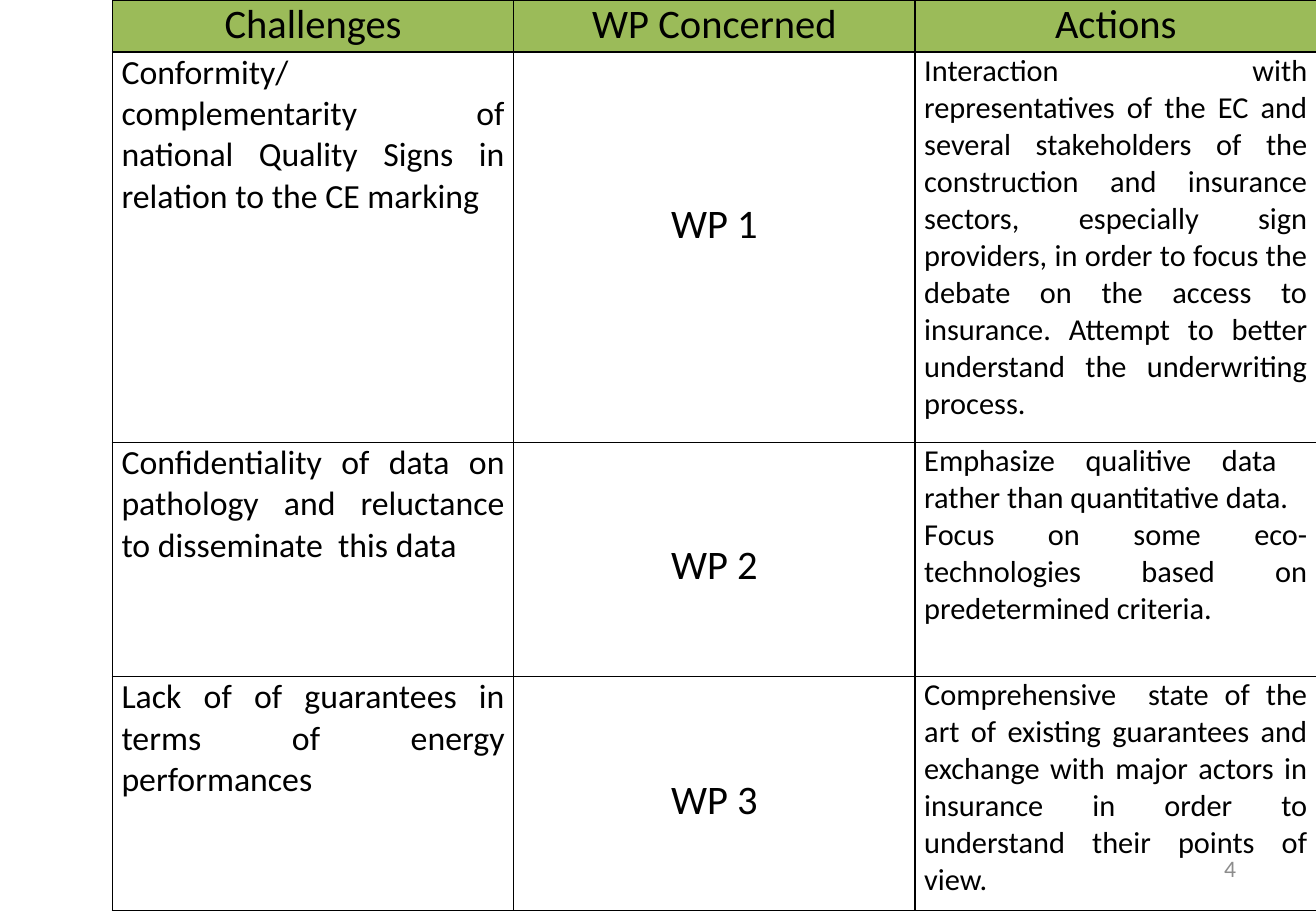
import pptx
import pptx.dml.color
import pptx.enum.text
import pptx.oxml
import pptx.oxml.ns
import pptx.util
from dataclasses import dataclass

Cm = pptx.util.Cm
Align = pptx.enum.text.PP_ALIGN


@dataclass(frozen=True)
class Theme:
    font: str = "Calibri"
    text: str = "000000"
    border: str = "000000"
    header_fill: str = "9BBB59"
    page_number: str = "8C8C8C"
    heading_size: int = 24
    challenge_size: int = 20
    action_size: int = 18
    page_number_size: int = 14


theme = Theme()


def write(frame, lines, size, color, alignment):
    frame.word_wrap = True
    for index, line in enumerate(lines):
        paragraph = frame.paragraphs[0] if index == 0 else frame.add_paragraph()
        paragraph.alignment = alignment
        run = paragraph.add_run()
        run.text = line
        run.font.name = theme.font
        run.font.size = pptx.util.Pt(size)
        run.font.color.rgb = pptx.dml.color.RGBColor.from_string(color)


def add_borders(cell):
    properties = cell._tc.get_or_add_tcPr()
    for side in ("lnL", "lnR", "lnT", "lnB"):
        properties.append(pptx.oxml.parse_xml(
            f'<a:{side} {pptx.oxml.ns.nsdecls("a")} w="12700"><a:solidFill>'
            f'<a:srgbClr val="{theme.border}"/></a:solidFill></a:{side}>'))


presentation = pptx.Presentation()
presentation.slide_width = Cm(27.51)
presentation.slide_height = Cm(19.05)
slide = presentation.slides.add_slide(presentation.slide_layouts[6])

headings = ["Challenges", "WP Concerned", "Actions"]
work_packages = [
    (["Conformity/complementarity of national Quality Signs in relation to the CE marking"],
     ["WP 1"],
     ["Interaction with representatives of the EC and several stakeholders of the "
      "construction and insurance sectors, especially sign providers, in order to focus "
      "the debate on the access to insurance. Attempt to better understand the "
      "underwriting process."]),
    (["Confidentiality of data on pathology and reluctance to disseminate  this data"],
     ["WP 2"],
     ["Emphasize qualitive data  rather than quantitative data.",
      "Focus on some eco-technologies based on predetermined criteria."]),
    (["Lack of of guarantees in terms of energy performances"],
     ["WP 3"],
     ["Comprehensive  state of the art of existing guarantees and exchange with major "
      "actors in insurance in order to understand their points of view."]),
]
row_heights = [1.09, 8.16, 4.9, 4.9]
wp_offsets = [3.1, 2.07, 2.07]
column_width = 8.39
column_styles = [
    (theme.challenge_size, Align.JUSTIFY),
    (theme.heading_size, Align.CENTER),
    (theme.action_size, Align.JUSTIFY),
]

challenges = slide.shapes.add_table(
    len(row_heights), len(headings), Cm(2.35), Cm(0),
    Cm(column_width * len(headings)), Cm(sum(row_heights))).table
challenges.first_row = False
challenges.horz_banding = False
for column in challenges.columns:
    column.width = Cm(column_width)
for row, height in zip(challenges.rows, row_heights):
    row.height = Cm(height)

for cell in challenges.iter_cells():
    margins = {"margin_left": 0.19, "margin_right": 0.19, "margin_top": 0, "margin_bottom": 0}
    for side, length in margins.items():
        setattr(cell, side, Cm(length))
    add_borders(cell)
    cell.fill.background()

for column, heading in enumerate(headings):
    cell = challenges.cell(0, column)
    cell.fill.solid()
    cell.fill.fore_color.rgb = pptx.dml.color.RGBColor.from_string(theme.header_fill)
    write(cell.text_frame, [heading], theme.heading_size, theme.text, Align.CENTER)

for row, (work_package, offset) in enumerate(zip(work_packages, wp_offsets), start=1):
    challenges.cell(row, 1).margin_top = Cm(offset)
    for column, (lines, (size, alignment)) in enumerate(zip(work_package, column_styles)):
        write(challenges.cell(row, column).text_frame, lines, size, theme.text, alignment)

page_number = slide.shapes.add_textbox(Cm(19.71), Cm(17.65), Cm(6.43), Cm(1.02)).text_frame
page_number_format = {
    "vertical_anchor": pptx.enum.text.MSO_ANCHOR.MIDDLE,
    "margin_left": Cm(0.3), "margin_right": Cm(0.3),
    "margin_top": Cm(0.15), "margin_bottom": Cm(0.15),
}
for attribute, value in page_number_format.items():
    setattr(page_number, attribute, value)
write(page_number, ["4"], theme.page_number_size, theme.page_number, Align.RIGHT)

presentation.save("out.pptx")
